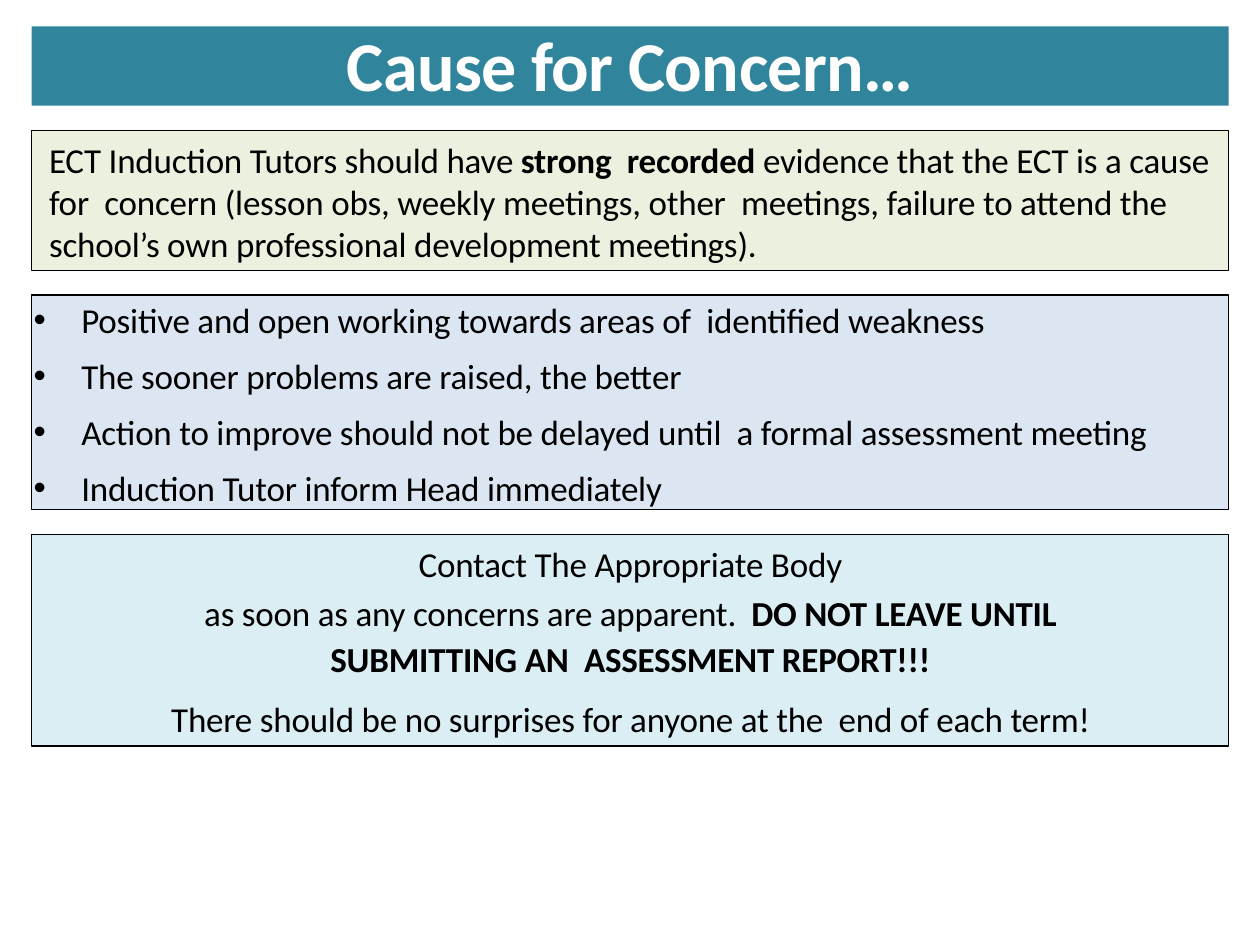
from lxml import etree
from pptx import Presentation
from pptx.dml.color import RGBColor
from pptx.enum import shapes, text
from pptx.oxml.ns import qn
from pptx.util import Cm, Pt

FONT = "Calibri"
LEFT, WIDTH, TOP, GAP = 0.64, 24.13, 0.53, 0.5
TITLE = {"text": "Cause for Concern…", "height": 1.6, "fill": "30859C"}

# A paragraph is a list of parts; every second part is bold.
PANELS = [
    {
        "height": 2.82, "fill": "EBF1DE", "insets": (0.25, 0.16),
        "paragraphs": [
            {"parts": ["ECT Induction Tutors should have ", "strong  recorded ",
                       "evidence that the ECT is a cause for  concern (lesson obs, "
                       "weekly meetings, other  meetings, failure to attend the "
                       "school’s own professional development meetings)."],
             "margin": 0.1},
        ],
    },
    {
        "height": 4.32, "fill": "DCE6F2", "insets": (0, 0.06),
        "paragraphs": [
            {"parts": [line], "margin": 1, "bullet": True, "before": 8}
            for line in (
                "Positive and open working towards areas of  identified weakness",
                "The sooner problems are raised, the better",
                "Action to improve should not be delayed until  a formal assessment meeting",
                "Induction Tutor inform Head immediately",
            )
        ],
    },
    {
        "height": 4.27, "fill": "DBEEF4", "insets": (0.25, 0.16), "centred": True,
        "paragraphs": [
            {"parts": ["Contact The Appropriate Body"]},
            {"parts": ["as soon as any concerns are apparent.  ",
                       "DO NOT LEAVE UNTIL SUBMITTING AN  ASSESSMENT REPORT!!!"],
             "margin": 1.73, "margin_right": 1.73, "before": 1.7, "spacing": 1.1},
            {"parts": ["There should be no surprises for anyone at the  end of each term!"],
             "before": 10.3},
        ],
    },
]


def colour(hex_code):
    return RGBColor.from_string(hex_code)


def format_run(run, size, hex_code, bold, tracking):
    """Tracking is in hundredths of a point."""
    run.font.name, run.font.size, run.font.bold = FONT, Pt(size), bold
    run.font.color.rgb = colour(hex_code)
    run._r.get_or_add_rPr().set("spc", str(tracking))


def set_frame(frame, side, top):
    frame.word_wrap = True
    frame.auto_size = text.MSO_AUTO_SIZE.NONE
    frame.vertical_anchor = text.MSO_ANCHOR.TOP
    frame.margin_left = frame.margin_right = Cm(side)
    frame.margin_top, frame.margin_bottom = Cm(top), Cm(0)


def place(shape, top, height, fill):
    shape.left, shape.top = Cm(LEFT), Cm(top)
    shape.width, shape.height = Cm(WIDTH), Cm(height)
    shape.fill.solid()
    shape.fill.fore_color.rgb = colour(fill)


def fill_paragraph(paragraph, content, centred, first):
    properties = paragraph._p.get_or_add_pPr()
    properties.set("marL", str(Cm(content.get("margin", 0))))
    properties.set("marR", str(Cm(content.get("margin_right", 0))))
    if content.get("bullet"):
        properties.set("indent", str(Cm(-0.96)))
        etree.SubElement(properties, qn("a:buFont"), typeface="Arial")
        etree.SubElement(properties, qn("a:buChar"), char="•")
    paragraph.alignment = text.PP_ALIGN.CENTER if centred else text.PP_ALIGN.LEFT
    paragraph.space_before = Pt(0 if first else content.get("before", 0))
    paragraph.line_spacing = content.get("spacing", 1.0)
    for index, part in enumerate(content["parts"]):
        run = paragraph.add_run()
        run.text = part
        format_run(run, 20, "000000", index % 2 == 1, -15)


def add_panel(slide, panel, top):
    shape = slide.shapes.add_shape(shapes.MSO_SHAPE.RECTANGLE, 0, 0, 0, 0)
    shape.shadow.inherit = False
    place(shape, top, panel["height"], panel["fill"])
    shape.line.color.rgb = colour("000000")
    shape.line.width = Pt(0.75)
    frame = shape.text_frame
    set_frame(frame, *panel["insets"])
    for index, content in enumerate(panel["paragraphs"]):
        paragraph = frame.add_paragraph() if index else frame.paragraphs[0]
        fill_paragraph(paragraph, content, panel.get("centred"), index == 0)


def main():
    deck = Presentation()
    deck.slide_width, deck.slide_height = Cm(25.4), Cm(19.05)
    slide = deck.slides.add_slide(deck.slide_layouts[5])

    title = slide.shapes.title
    place(title, TOP, TITLE["height"], TITLE["fill"])
    set_frame(title.text_frame, 0, 0)
    title.text_frame.text = TITLE["text"]
    heading = title.text_frame.paragraphs[0]
    heading.alignment = text.PP_ALIGN.CENTER
    heading.line_spacing = Pt(45.5)
    format_run(heading.runs[0], 40, "FFFFFF", True, -30)

    top = TOP + TITLE["height"] + GAP
    for panel in PANELS:
        add_panel(slide, panel, top)
        top += panel["height"] + GAP
    deck.save("out.pptx")


if __name__ == "__main__":
    main()
